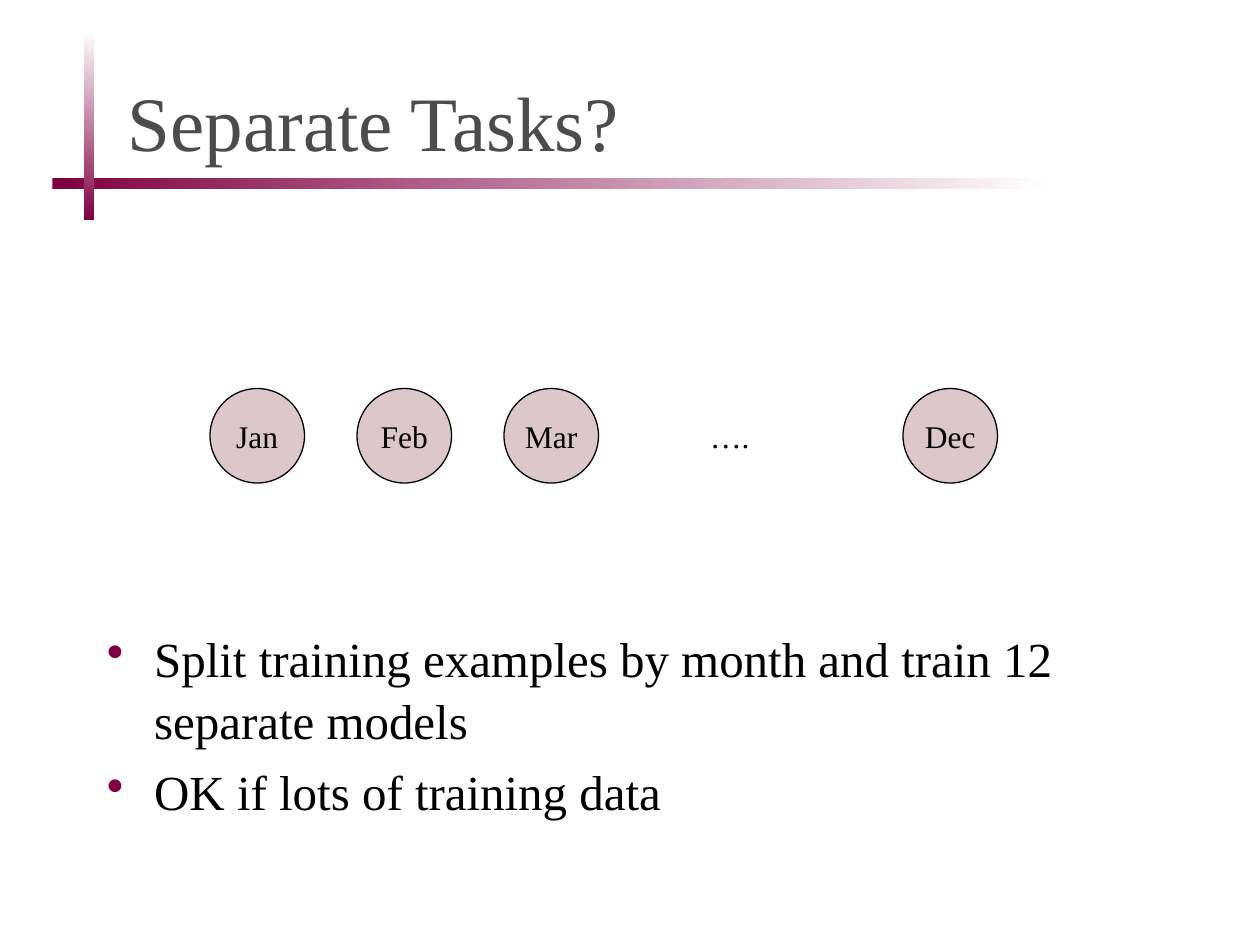
import pptx
import pptx.util
import pptx.dml.color
import pptx.enum.shapes
import pptx.enum.text
import pptx.oxml

Pt = pptx.util.Pt
SHAPE = pptx.enum.shapes.MSO_SHAPE
ANCHOR = pptx.enum.text.MSO_ANCHOR
ALIGN = pptx.enum.text.PP_ALIGN

FONT = "Times New Roman"
WINE, WHITE, BLACK, GREY, ROSE = "800040", "FFFFFF", "000000", "4C4C4C", "DCC8C8"


def rgb(value):
    return pptx.dml.color.RGBColor.from_string(value)


def add_run(p, text, size, color=BLACK):
    r = p.add_run()
    r.text = text
    r.font.name = FONT
    r.font.size = Pt(size)
    r.font.color.rgb = rgb(color)


def add_box(s, x, y, w, h, anchor=ANCHOR.TOP):
    tf = s.shapes.add_textbox(Pt(x), Pt(y), Pt(w), Pt(h)).text_frame
    tf.word_wrap = True
    tf.vertical_anchor = anchor
    return tf


def add_bar(s, x, y, w, h, colors, angle):
    sp = s.shapes.add_shape(SHAPE.RECTANGLE, Pt(x), Pt(y), Pt(w), Pt(h))
    sp.shadow.inherit = False
    sp.line.fill.background()
    sp.fill.gradient()
    sp.fill.gradient_angle = angle
    for stop, color in zip(sp.fill.gradient_stops, colors):
        stop.color.rgb = rgb(color)


def add_title(s, x, y, w, h, text):
    # Crossed fading bars
    add_bar(s, x, y + 84, 570, 6, (WINE, WHITE), 0)
    add_bar(s, x + 18, y, 6, 108, (WHITE, WINE), 270)
    # Heading
    tf = add_box(s, x + 36, y + 6, w - 36, h, ANCHOR.MIDDLE)
    add_run(tf.paragraphs[0], text, 44, GREY)


def add_month(s, x, y, size, name):
    sp = s.shapes.add_shape(SHAPE.OVAL, Pt(x), Pt(y), Pt(size), Pt(size))
    sp.shadow.inherit = False
    sp.fill.solid()
    sp.fill.fore_color.rgb = rgb(ROSE)
    sp.line.color.rgb = rgb(BLACK)
    sp.line.width = Pt(0.75)
    tf = sp.text_frame
    tf.word_wrap = False
    tf.vertical_anchor = ANCHOR.MIDDLE
    tf.paragraphs[0].alignment = ALIGN.CENTER
    add_run(tf.paragraphs[0], name, 18)


def add_months(s, x, y, w, size):
    # First months at an equal pitch, the last one at the right end
    for i, name in enumerate(("Jan", "Feb", "Mar")):
        add_month(s, x + 84 * i, y, size, name)
    add_month(s, x + w - size, y, size, "Dec")
    # Ellipsis for the months between
    tf = add_box(s, x + 270, y + 12.5, size, 29)
    tf.paragraphs[0].alignment = ALIGN.CENTER
    add_run(tf.paragraphs[0], "….", 18)


def add_bullets(s, x, y, w, h, items):
    tf = add_box(s, x, y, w, h)
    for i, text in enumerate(items):
        p = tf.add_paragraph() if i else tf.paragraphs[0]
        p.space_before = Pt(5.6)
        p.line_spacing = 1.05
        pPr = p._p.get_or_add_pPr()
        pPr.set("marL", str(Pt(27)))
        pPr.set("indent", str(-Pt(27)))
        ns = 'xmlns:a="http://schemas.openxmlformats.org/drawingml/2006/main"'
        for xml in (f'<a:buClr {ns}><a:srgbClr val="{WINE}"/></a:buClr>',
                    f'<a:buChar {ns} char="•"/>'):
            pPr.append(pptx.oxml.parse_xml(xml))
        add_run(p, text, 28)


def main():
    prs = pptx.Presentation()
    prs.slide_width, prs.slide_height = Pt(720), Pt(540)
    s = prs.slides.add_slide(prs.slide_layouts[6])
    add_title(s, 30, 18, 636, 90, "Separate Tasks?")
    add_months(s, 120, 222, 450, 54)
    add_bullets(s, 54, 354, 612, 126, (
        "Split training examples by month and train 12 separate models",
        "OK if lots of training data",
    ))
    prs.save("out.pptx")


if __name__ == "__main__":
    main()
